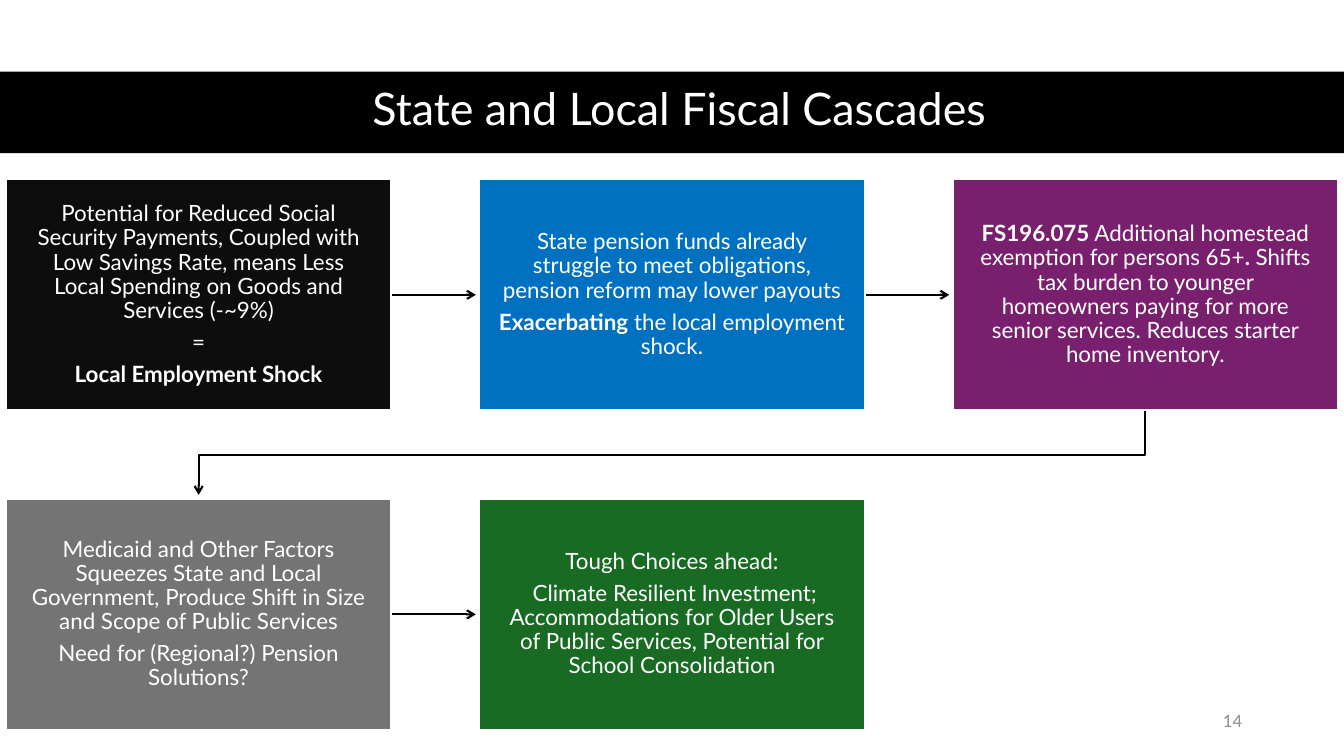
from lxml import etree
from pptx import Presentation
from pptx.dml.color import RGBColor
from pptx.enum.shapes import MSO_CONNECTOR, MSO_SHAPE
from pptx.enum.text import MSO_ANCHOR, PP_ALIGN
from pptx.oxml.ns import qn
from pptx.util import Inches, Pt

RECT = MSO_SHAPE.RECTANGLE
LINE = MSO_CONNECTOR.STRAIGHT
MID = MSO_ANCHOR.MIDDLE
MIDDLE = PP_ALIGN.CENTER
RIGHT = PP_ALIGN.RIGHT

BLACK = RGBColor(0x00, 0x00, 0x00)
WHITE = RGBColor(0xFF, 0xFF, 0xFF)
GRAY = RGBColor(0x8C, 0x8C, 0x8C)
COAL = RGBColor(0x0D, 0x0D, 0x0D)
BLUE = RGBColor(0x00, 0x70, 0xC0)
PLUM = RGBColor(0x78, 0x20, 0x6E)
STONE = RGBColor(0x74, 0x74, 0x74)
GREEN = RGBColor(0x19, 0x6B, 0x24)

LEFT, TOP, WIDE, HIGH = 0.06, 1.78, 3.82, 2.29
STEP, DROP, GAP = 4.695, 3.17, 0.84

FRAME = {
    "word_wrap": True,
    "vertical_anchor": MID,
    "margin_left": Inches(0.19),
    "margin_right": Inches(0.19),
    "margin_top": Inches(0.2),
    "margin_bottom": Inches(0.2),
}
BODY = {"alignment": MIDDLE, "line_spacing": 0.9, "space_after": Pt(5.6)}

STEPS = [
    (0, 0, COAL, [
        [("Potential for Reduced Social Security Payments, Coupled with Low "
          "Savings Rate, means Less Local Spending on Goods and Services (-~9%)", False)],
        [("=", False)],
        [("Local Employment Shock", True)],
    ]),
    (1, 0, BLUE, [
        [("State pension funds already struggle to meet obligations, "
          "pension reform may lower payouts", False)],
        [("Exacerbating", True), (" the local employment shock.", False)],
    ]),
    (2, 0, PLUM, [
        [("FS196.075", True),
         (" Additional homestead exemption for persons 65+", False),
         (". ", True),
         ("Shifts tax burden to younger homeowners paying for more senior "
          "services. Reduces starter home inventory.", False)],
    ]),
    (0, 1, STONE, [
        [("Medicaid and Other Factors Squeezes State and Local Government, "
          "Produce Shift in Size and Scope of Public Services", False)],
        [("Need for (Regional?) Pension Solutions?", False)],
    ]),
    (1, 1, GREEN, [
        [("Tough Choices ahead:", False)],
        [(" Climate Resilient Investment; Accommodations for Older Users of "
          "Public Services, Potential for School Consolidation", False)],
    ]),
]
LABELS = [
    ("State and Local Fiscal Cascades", (0.61, 0.7, 12.26, 0.81), 32, WHITE,
     {"alignment": MIDDLE, "line_spacing": 0.9}),
    ("14", (9.42, 6.95, 3, 0.4), 12, GRAY, {"alignment": RIGHT, "space_after": Pt(6)}),
]


def write(para, runs, size, color, look):
    for name, value in look.items():
        setattr(para, name, value)
    for words, bold in runs:
        run = para.add_run()
        run.text = words
        font = run.font
        for name, value in {"name": "Lato", "size": Pt(size), "bold": bold}.items():
            setattr(font, name, value)
        font.color.rgb = color


def point(arrow):
    arrow.line.color.rgb = BLACK
    arrow.line.width = Pt(1.5)
    etree.SubElement(arrow.line._get_or_add_ln(), qn("a:tailEnd"), type="arrow")
    etree.SubElement(arrow._element.spPr, qn("a:effectLst"))


deck = Presentation()
deck.slide_width = Inches(13.33)
deck.slide_height = Inches(7.5)
slide = deck.slides.add_slide(deck.slide_layouts[6])
shapes = slide.shapes

band = shapes.add_shape(RECT, 0, Inches(0.71), Inches(13.33), Inches(0.81))
band.shadow.inherit = False
band.fill.solid()
band.fill.fore_color.rgb = BLACK
band.line.fill.background()

for words, place, size, color, look in LABELS:
    label = shapes.add_textbox(*map(Inches, place))
    frame = label.text_frame
    frame.word_wrap = True
    frame.vertical_anchor = MID
    write(frame.paragraphs[0], [(words, False)], size, color, look)

for col, row in [(0, 0), (1, 0), (0, 1)]:
    start = LEFT + col * STEP + WIDE
    level = Inches(TOP + row * DROP + HIGH / 2)
    point(shapes.add_connector(LINE, Inches(start), level, Inches(start + GAP), level))

near = Inches(LEFT + WIDE / 2)
far = Inches(LEFT + 2 * STEP + WIDE / 2)
base = TOP + HIGH
turn = Inches(base + 0.44)
path = shapes.build_freeform(far, Inches(base))
path.add_line_segments([(far, turn), (near, turn), (near, Inches(base + GAP))], close=False)
elbow = path.convert_to_shape()
elbow.fill.background()
point(elbow)

for col, row, color, paras in STEPS:
    box = shapes.add_shape(RECT, Inches(LEFT + col * STEP), Inches(TOP + row * DROP),
                           Inches(WIDE), Inches(HIGH))
    box.shadow.inherit = False
    box.fill.solid()
    box.fill.fore_color.rgb = color
    box.line.color.rgb = WHITE
    box.line.width = Pt(1.5)
    frame = box.text_frame
    for name, value in FRAME.items():
        setattr(frame, name, value)
    for rank, runs in enumerate(paras):
        para = frame.add_paragraph() if rank else frame.paragraphs[0]
        write(para, runs, 16, WHITE, BODY)

deck.save("out.pptx")
